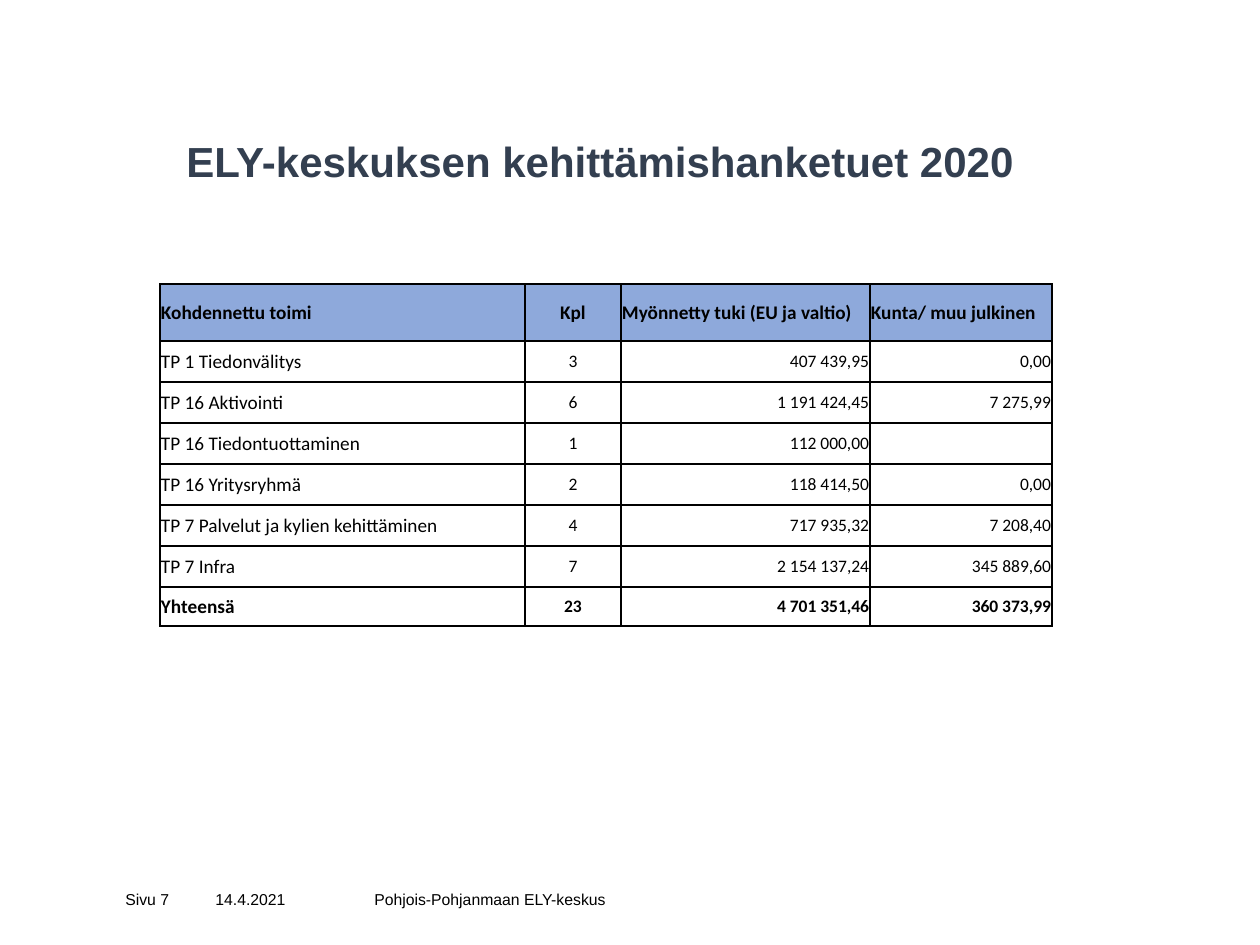
from dataclasses import dataclass

from lxml import etree
from pptx import Presentation
from pptx import util as u
from pptx.dml.color import RGBColor
from pptx.enum import text
from pptx.oxml import ns

PX = 914400 / 126
LEFT, MID, RIGHT = text.PP_ALIGN.LEFT, text.PP_ALIGN.CENTER, text.PP_ALIGN.RIGHT


@dataclass(frozen=True)
class Theme:
    title: str = "333F50"
    ink: str = "000000"
    head: str = "8EA9DB"
    sans: str = "Arial"
    grid: str = "Calibri"
    big: int = 24
    label: int = 11
    value: int = 10
    small: int = 9


def emu(px):
    return u.Emu(round(px * PX))


class Deck:
    def __init__(self, theme):
        self.theme = theme
        self.prs = Presentation()
        self.prs.slide_width, self.prs.slide_height = emu(1260), emu(945)
        self.slide = self.prs.slides.add_slide(self.prs.slide_layouts[6])

    def style(self, para, words, face, size, color, bold=False, align=LEFT):
        para.text = words
        para.alignment = align
        font = para.font
        font.name, font.size, font.bold = face, u.Pt(size), bold
        font.color.rgb = RGBColor.from_string(color)

    def label(self, box, words, size, color, bold=False, align=LEFT):
        frame = self.slide.shapes.add_textbox(*map(emu, box)).text_frame
        frame.word_wrap = True
        frame.vertical_anchor = text.MSO_ANCHOR.MIDDLE
        frame.margin_top = frame.margin_bottom = 0
        self.style(frame.paragraphs[0], words, self.theme.sans, size, color, bold, align)

    def border(self, cell):
        props = cell._tc.get_or_add_tcPr()
        for spot, side in enumerate(("lnL", "lnR", "lnT", "lnB")):
            line = etree.Element(ns.qn("a:" + side), w=str(u.Pt(1)))
            fill = etree.SubElement(line, ns.qn("a:solidFill"))
            etree.SubElement(fill, ns.qn("a:srgbClr"), val=self.theme.ink)
            props.insert(spot, line)

    def cell(self, cell, words, size, bold, align, fill):
        cell.margin_left = cell.margin_right = cell.margin_top = emu(1)
        cell.margin_bottom = 0
        cell.vertical_anchor = text.MSO_ANCHOR.MIDDLE
        if fill:
            cell.fill.solid()
            cell.fill.fore_color.rgb = RGBColor.from_string(fill)
        else:
            cell.fill.background()
        self.border(cell)
        self.style(cell.text_frame.paragraphs[0], words, self.theme.grid,
                   size, self.theme.ink, bold, align)

    def table(self, left, top, cols, rows, data):
        theme = self.theme
        table = self.slide.shapes.add_table(
            len(rows), len(cols), emu(left), emu(top), emu(sum(cols)), emu(sum(rows))).table
        table.first_row = table.horz_banding = False
        for col, wide in zip(table.columns, cols):
            col.width = emu(wide)
        for row, high in zip(table.rows, rows):
            row.height = emu(high)
        last = len(data) - 1
        for r, line in enumerate(data):
            for c, words in enumerate(line):
                head = r == 0
                align = MID if c == 1 else RIGHT if c > 1 and not head else LEFT
                size = theme.label if head or c == 0 else theme.value
                self.cell(table.cell(r, c), words, size, r in (0, last), align,
                          theme.head if head else None)


def main():
    theme = Theme()
    deck = Deck(theme)

    # Title
    deck.label((84, 106, 1032, 110), "ELY-keskuksen kehittämishanketuet 2020",
               theme.big, theme.title, True, MID)

    # Grants by measure
    grants = [
        ("Kohdennettu toimi", "Kpl", "Myönnetty tuki (EU ja valtio)", "Kunta/ muu julkinen"),
        ("TP 1 Tiedonvälitys", "3", "407 439,95", "0,00"),
        ("TP 16 Aktivointi", "6", "1 191 424,45", "7 275,99"),
        ("TP 16 Tiedontuottaminen", "1", "112 000,00", ""),
        ("TP 16 Yritysryhmä", "2", "118 414,50", "0,00"),
        ("TP 7 Palvelut ja kylien kehittäminen", "4", "717 935,32", "7 208,40"),
        ("TP 7 Infra", "7", "2 154 137,24", "345 889,60"),
        ("Yhteensä", "23", "4 701 351,46", "360 373,99"),
    ]
    deck.table(160, 284, [365, 96, 249, 182], [57] + [41] * 6 + [39], grants)

    # Footer
    for left, wide, words in (
        (113, 90, "Sivu 7"),
        (203, 159, "14.4.2021"),
        (362, 556, "Pohjois-Pohjanmaan ELY-keskus"),
    ):
        deck.label((left, 890, wide, 19), words, theme.small, theme.ink)

    deck.prs.save("out.pptx")


if __name__ == "__main__":
    main()
